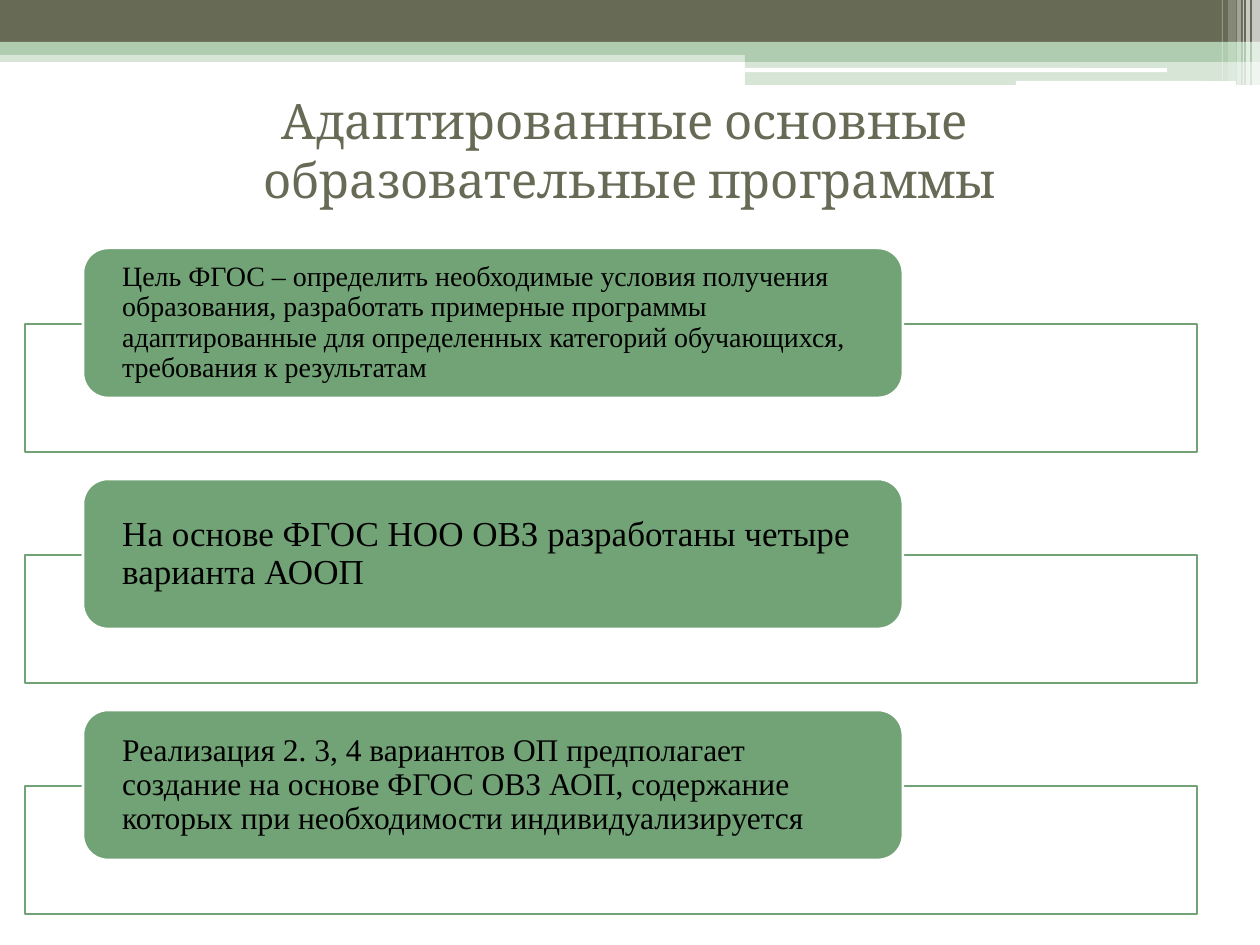
from dataclasses import dataclass

from lxml import etree
from pptx import Presentation
from pptx.dml.color import RGBColor
from pptx.enum.shapes import MSO_SHAPE as Preset
from pptx.enum.text import MSO_ANCHOR as Anchor, MSO_AUTO_SIZE as AutoSize, PP_ALIGN as Align
from pptx.oxml.ns import qn
from pptx.util import Pt

PX = 914400 / 126


@dataclass(frozen=True)
class Theme:
    olive: str = "676A55"
    mint: str = "B0CCB0"
    green: str = "72A376"
    white: str = "FFFFFF"
    black: str = "000000"
    heading_font: str = "Cambria"
    body_font: str = "Times New Roman"
    heading_size: int = 28
    card_sizes: tuple = (16, 20, 18)
    outline: float = 1.5


THEME = Theme()

TITLE = "Адаптированные основные \vобразовательные программы"
CARDS = (
    "Цель ФГОС – определить необходимые условия получения образования, "
    "разработать примерные программы адаптированные для определенных категорий "
    "обучающихся, требования к результатам",
    "На основе ФГОС НОО ОВЗ разработаны четыре варианта АООП",
    "Реализация 2. 3, 4 вариантов ОП предполагает создание на основе ФГОС ОВЗ АОП, "
    "содержание которых при необходимости индивидуализируется",
)

# left, top, width, height, colour, opacity in percent
BANDS = (
    (0, 50, 1260, 12, THEME.mint, 50),
    (0, 0, 1260, 42, THEME.olive, 100),
    (0, 42, 1260, 13, THEME.mint, 100),
    (745, 49, 515, 13, THEME.mint, 100),
    (745, 61, 515, 24, THEME.mint, 50),
)
GAPS = ((745, 68, 422, 4), (1016, 81, 220, 5))
# left, width, height, opacity in percent
STRIPES = (
    (1252, 8, 85, 65), (1246, 4, 85, 65), (1243, 1, 85, 60),
    (1237, 4, 85, 40), (1228, 8, 81, 20), (1222, 1, 81, 30),
)
FIRST_PANEL_TOP = 324
CARD_PITCH = 231


def px(length):
    return round(length * PX)


def set_attributes(target, values):
    for name, value in values.items():
        setattr(target, name, value)


def add_block(slide, preset, place, colour, opacity=100, outline=None):
    block = slide.shapes.add_shape(preset, *map(px, place))
    block.shadow.inherit = False
    block.fill.solid()
    block.fill.fore_color.rgb = RGBColor.from_string(colour)
    if opacity < 100:
        solid = block.element.spPr.find(qn("a:solidFill"))
        etree.SubElement(solid[0], qn("a:alpha"), val=str(opacity * 1000))
    if outline:
        block.line.color.rgb = RGBColor.from_string(outline)
        block.line.width = Pt(THEME.outline)
    else:
        block.line.fill.background()
    return block


def write_text(frame, text, frame_format, paragraph_format, font, size, colour):
    set_attributes(frame, {"word_wrap": True, "vertical_anchor": Anchor.MIDDLE,
                           "auto_size": AutoSize.NONE, **frame_format})
    paragraph = frame.paragraphs[0]
    paragraph.text = text
    set_attributes(paragraph, paragraph_format)
    for run in paragraph.runs:
        set_attributes(run.font, {"name": font, "size": Pt(size)})
        run.font.color.rgb = RGBColor.from_string(colour)


def add_header(slide):
    for *place, colour, opacity in BANDS:
        add_block(slide, Preset.RECTANGLE, place, colour, opacity)
    for place in GAPS:
        add_block(slide, Preset.ROUNDED_RECTANGLE, place, THEME.white)
    for left, width, height, opacity in STRIPES:
        add_block(slide, Preset.RECTANGLE, (left, 0, width, height), THEME.white, opacity)


def place_title(slide):
    """Format the title and bring it in front of the header bands."""
    title = slide.shapes.title
    set_attributes(title, {"left": 0, "top": px(76), "width": px(1260), "height": px(147)})
    write_text(title.text_frame, TITLE, {}, {"alignment": Align.CENTER},
               THEME.heading_font, THEME.heading_size, THEME.olive)
    title.element.getparent().append(title.element)


def add_card(slide, panel_top, text, size):
    add_block(slide, Preset.RECTANGLE, (25, panel_top, 1172, 128),
              THEME.white, 90, THEME.green)
    card = add_block(slide, Preset.ROUNDED_RECTANGLE, (83, panel_top - 76, 820, 150),
                     THEME.green, outline=THEME.white)
    insets = {"margin_left": px(32), "margin_right": px(32),
              "margin_top": 0, "margin_bottom": 0}
    write_text(card.text_frame, text, insets,
               {"alignment": Align.LEFT, "line_spacing": 0.9},
               THEME.body_font, size, THEME.black)


def main():
    deck = Presentation()
    set_attributes(deck, {"slide_width": px(1260), "slide_height": px(945)})
    slide = deck.slides.add_slide(deck.slide_layouts.get_by_name("Title Only"))
    add_header(slide)
    place_title(slide)
    for index, (text, size) in enumerate(zip(CARDS, THEME.card_sizes)):
        add_card(slide, FIRST_PANEL_TOP + index * CARD_PITCH, text, size)
    deck.save("out.pptx")


if __name__ == "__main__":
    main()
